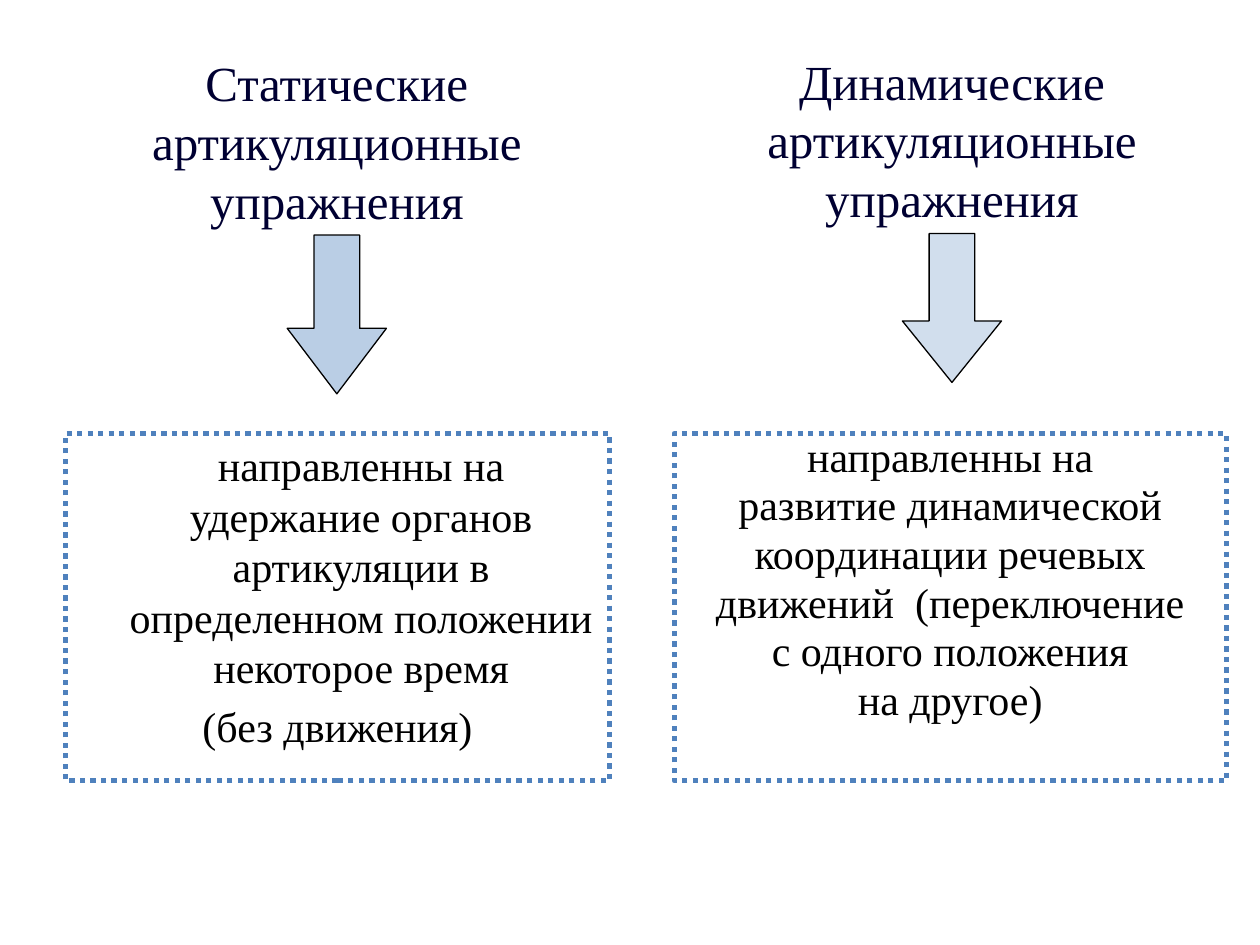
import lxml.etree
import pptx
import pptx.dml.color
import pptx.enum.dml
import pptx.enum.shapes
import pptx.enum.text
import pptx.oxml.ns
import pptx.util

Cm = pptx.util.Cm
Pt = pptx.util.Pt
qn = pptx.oxml.ns.qn

NAVY = pptx.dml.color.RGBColor(0x00, 0x00, 0x32)
BLACK = pptx.dml.color.RGBColor(0x00, 0x00, 0x00)
BLUE = pptx.dml.color.RGBColor(0x4F, 0x81, 0xBD)

FONT = "Times New Roman"
COLUMN_WIDTH = 11.4
HEADING_HEIGHT = 3.8
BODY_HEIGHT = 7
ARROW_THICKNESS = 2
HANGING = Cm(0.95)


def format_paragraph(paragraph, size, color):
    paragraph.alignment = pptx.enum.text.PP_ALIGN.CENTER
    for run in paragraph.runs:
        run.font.name = FONT
        run.font.size = Pt(size)
        run.font.color.rgb = color


def add_heading(slide, left, top, text):
    heading = slide.shapes.add_textbox(
        Cm(left), Cm(top), Cm(COLUMN_WIDTH), Cm(HEADING_HEIGHT))
    frame = heading.text_frame
    frame.word_wrap = True
    frame.vertical_anchor = pptx.enum.text.MSO_ANCHOR.MIDDLE
    frame.text = text
    format_paragraph(frame.paragraphs[0], 28, NAVY)


def add_down_arrow(slide, center, top, length, head, opacity):
    middle = top + length / 2
    arrow = slide.shapes.add_shape(
        pptx.enum.shapes.MSO_SHAPE.RIGHT_ARROW,
        Cm(center - length / 2), Cm(middle - ARROW_THICKNESS / 2),
        Cm(length), Cm(ARROW_THICKNESS))
    arrow.rotation = 90
    arrow.adjustments[0] = 0.46
    arrow.adjustments[1] = head
    arrow.shadow.inherit = False
    arrow.fill.solid()
    arrow.fill.fore_color.rgb = BLUE
    color = arrow.fill._xPr.find(qn("a:solidFill"))[0]
    lxml.etree.SubElement(color, qn("a:alpha")).set("val", str(opacity * 1000))
    arrow.line.color.rgb = BLACK
    arrow.line.width = Pt(0.75)


def fill_description(body, left, top, width, text, line_spacing, first_indent, gap):
    body.left, body.top = Cm(left), Cm(top)
    body.width, body.height = Cm(width), Cm(BODY_HEIGHT)
    body.line.color.rgb = BLUE
    body.line.width = Pt(3)
    body.line.dash_style = pptx.enum.dml.MSO_LINE.ROUND_DOT
    frame = body.text_frame
    frame.auto_size = pptx.enum.text.MSO_AUTO_SIZE.NONE
    frame.text = text
    for index, paragraph in enumerate(frame.paragraphs):
        properties = paragraph._p.get_or_add_pPr()
        properties.set("marL", str(HANGING))
        properties.set("indent", str(-HANGING if index else first_indent))
        lxml.etree.SubElement(properties, qn("a:buNone"))
        paragraph.line_spacing = line_spacing
        paragraph.space_before = Pt(gap if index else 0)
        format_paragraph(paragraph, 24, BLACK)


def add_exercise_column(slide, left, top, column):
    add_heading(slide, left, top, column["heading"])
    add_down_arrow(slide, left + COLUMN_WIDTH / 2, top + HEADING_HEIGHT,
                   *column["arrow"])
    inset, width = column["frame"]
    fill_description(slide.placeholders[column["placeholder"]], left + inset, 8.74,
                     width, column["description"], *column["paragraphs"])


def main():
    presentation = pptx.Presentation()
    presentation.slide_width, presentation.slide_height = Cm(25.4), Cm(19.05)
    slide = presentation.slides.add_slide(presentation.slide_layouts[3])
    title = slide.shapes.title.element
    title.getparent().remove(title)

    static_exercises = {
        "heading": "Статические артикуляционные упражнения",
        "arrow": (3.2, 0.66, 39),
        "frame": (0.23, 10.97),
        "placeholder": 1,
        "description": "направленны на удержание органов артикуляции "
                       "в определенном положении некоторое время\n"
                       "(без движения)",
        "paragraphs": (1.0, 0, 4.8),
    }
    dynamic_exercises = {
        "heading": "Динамические артикуляционные упражнения",
        "arrow": (3, 0.62, 26),
        "frame": (0.1, 11.13),
        "placeholder": 2,
        "description": "направленны на\n"
                       "развитие динамической\n"
                       "координации речевых\n"
                       "движений  (переключение\n"
                       "с одного положения\n"
                       "на другое)",
        "paragraphs": (0.8, -HANGING, 4.8),
    }
    add_exercise_column(slide, 1.09, 0.94, static_exercises)
    add_exercise_column(slide, 13.49, 0.91, dynamic_exercises)
    presentation.save("out.pptx")


if __name__ == "__main__":
    main()
